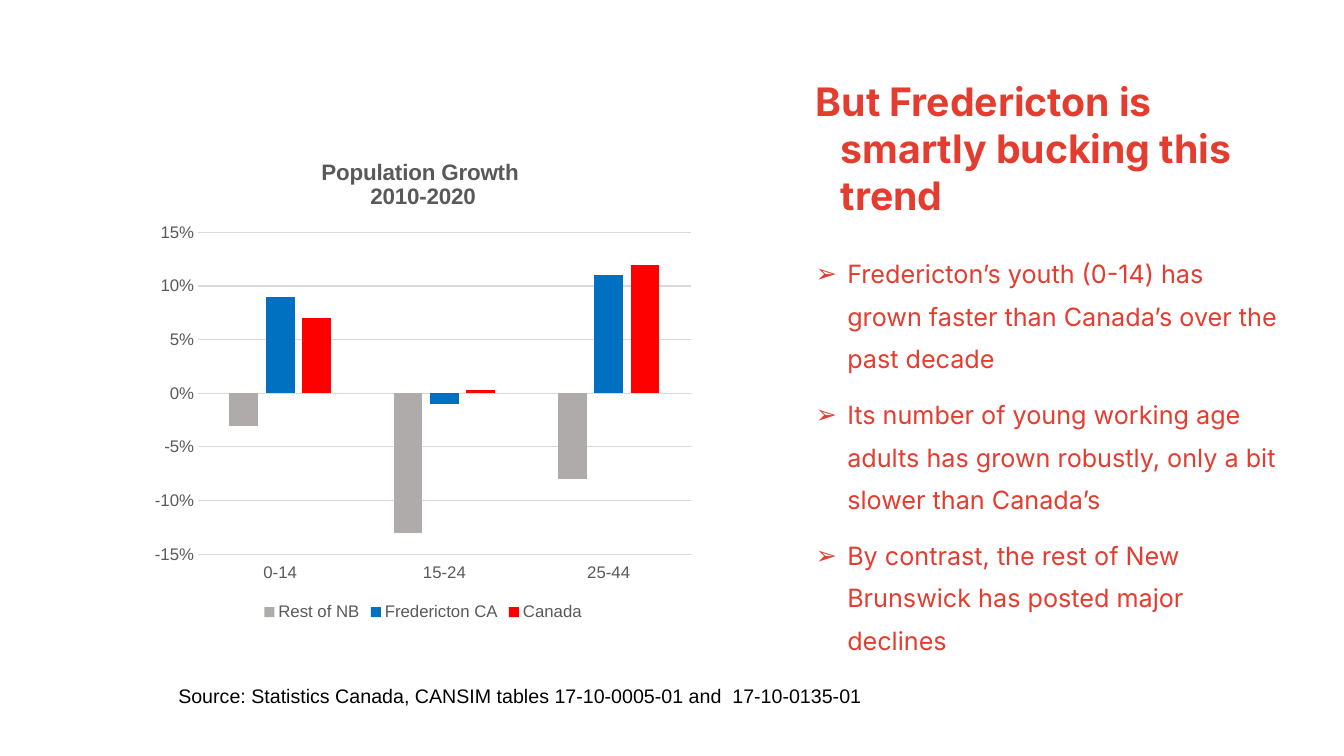
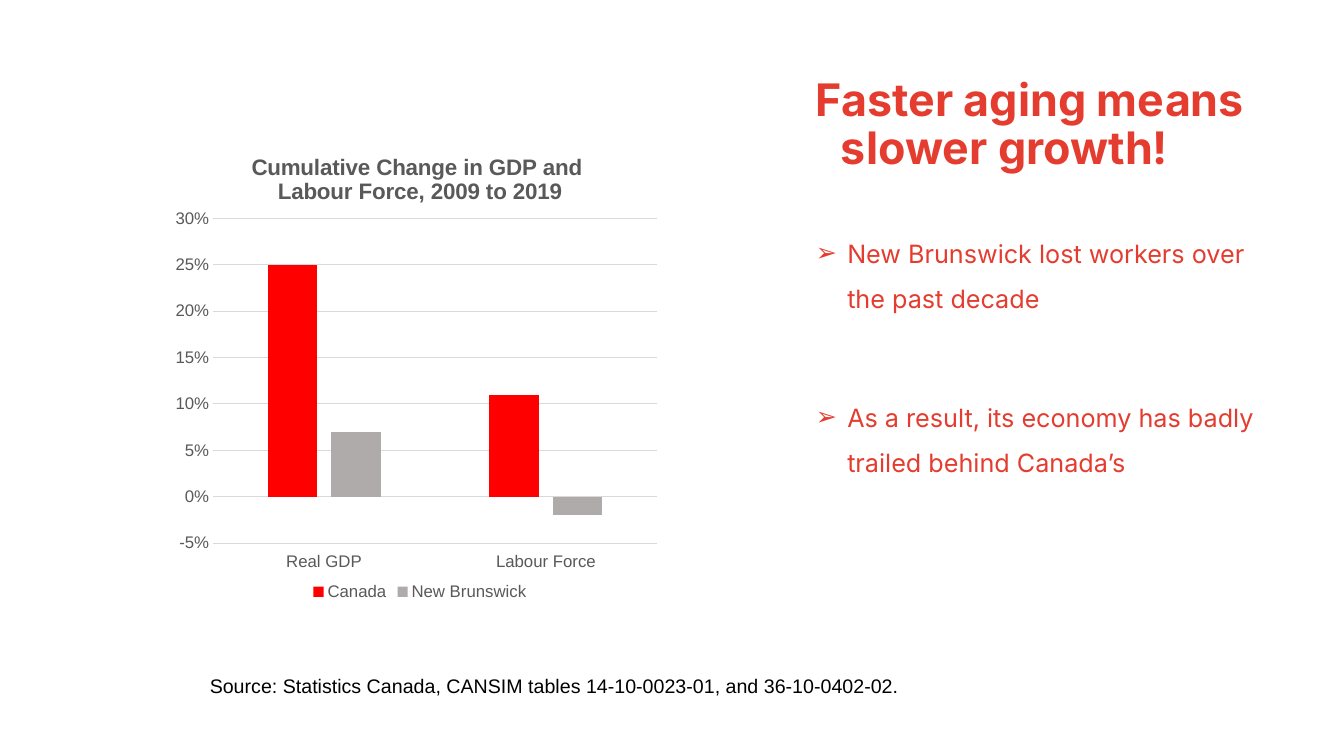
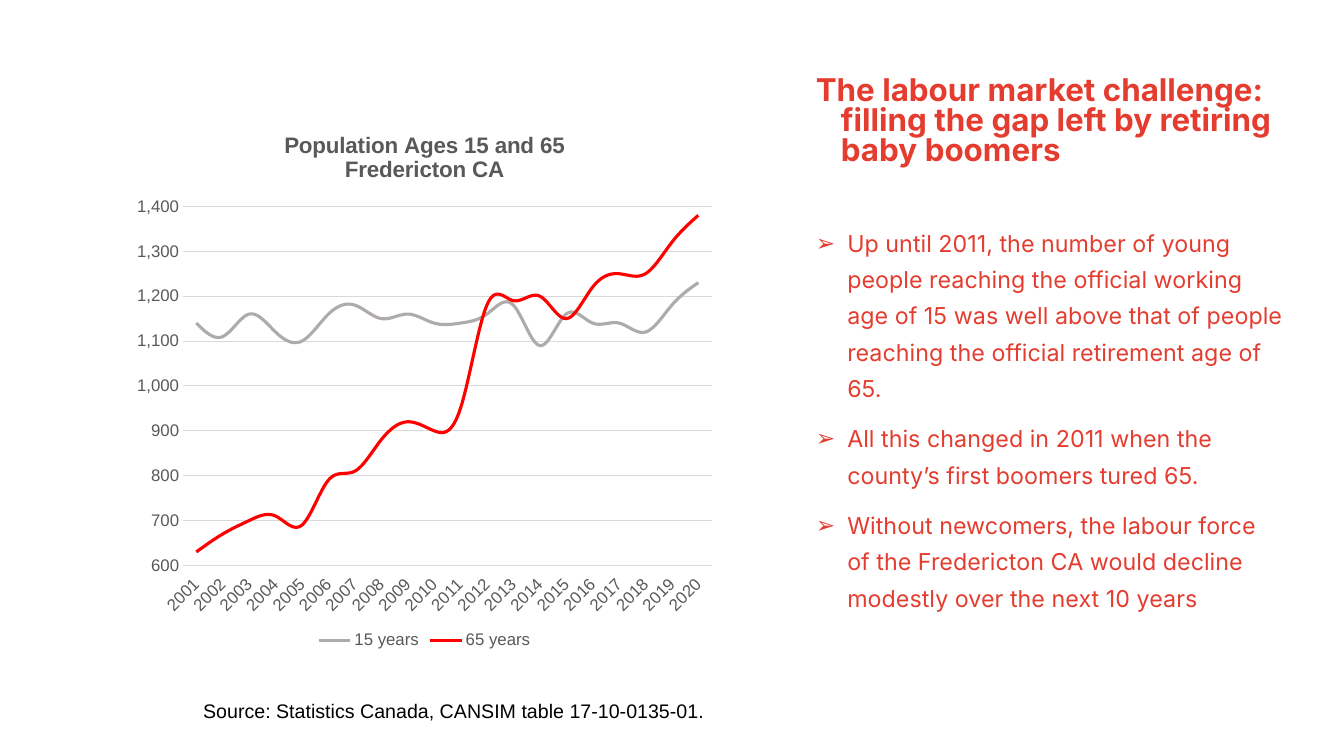
from lxml.etree import SubElement
from pptx import Presentation
from pptx.chart.data import CategoryChartData
from pptx.dml.color import RGBColor
from pptx.enum.chart import (XL_CHART_TYPE, XL_LEGEND_POSITION, XL_TICK_LABEL_POSITION,
                             XL_TICK_MARK)
from pptx.enum.text import MSO_ANCHOR, MSO_AUTO_SIZE, PP_ALIGN
from pptx.oxml import parse_xml
from pptx.oxml.ns import nsdecls, qn
from pptx.util import Pt

# Shared style
ACCENT, BLACK, LABEL, GRID = "E43D30", "000000", "595959", "D9D9D9"
GREY, BLUE, RED = "AFABAB", "0070C0", "FF0000"
TEXT_FONT, CHART_FONT = "Inter", "Arial"
COLUMN_LEFT, COLUMN_WIDTH = 557.5, 366.5
TITLE_TOP, TITLE_HEIGHT, LIST_HEIGHT = 51.75, 94, 312


def color(value):
    return RGBColor.from_string(value)


def set_font(font, size, name=CHART_FONT, hue=LABEL, bold=False):
    font.size, font.name, font.bold = Pt(size), name, bold
    font.color.rgb = color(hue)


def write_text(paragraph, text, size, name=TEXT_FONT, hue=ACCENT, bold=False,
               spacing=1.0, before=0, margin=0, indent=0, bullet=None):
    """Write one paragraph with its format."""
    paragraph.alignment = PP_ALIGN.LEFT
    paragraph.line_spacing, paragraph.space_before = spacing, Pt(before)
    properties = paragraph._p.get_or_add_pPr()
    properties.set("marL", str(Pt(margin)))
    properties.set("indent", str(Pt(indent)))
    if bullet:
        bullet_color = SubElement(properties, qn("a:buClr"))
        SubElement(bullet_color, qn("a:srgbClr"), val=hue)
        SubElement(properties, qn("a:buFont"), typeface=CHART_FONT)
        SubElement(properties, qn("a:buChar"), char=bullet)
    run = paragraph.add_run()
    run.text = text
    set_font(run.font, size, name, hue, bold)


def place(shape, box):
    shape.left, shape.top, shape.width, shape.height = (Pt(length) for length in box)
    frame = shape.text_frame
    frame.word_wrap = True
    frame.auto_size = MSO_AUTO_SIZE.NONE
    frame.vertical_anchor = MSO_ANCHOR.TOP
    return frame


def add_title(slide, box, text, size, spacing):
    frame = place(slide.shapes.title, box)
    write_text(frame.paragraphs[0], text, size, bold=True, spacing=spacing,
               margin=36, indent=-18)


def add_list(slide, box, items, size, spacing, gap):
    frame = place(slide.placeholders[1], box)
    for index, item in enumerate(items):
        paragraph = frame.add_paragraph() if index else frame.paragraphs[0]
        write_text(paragraph, item, size, spacing=spacing, before=gap if index else 0,
                   margin=40.5, indent=-22.5, bullet="➢")


def add_source(slide, box, text):
    frame = place(slide.shapes.add_textbox(0, 0, 0, 0), box)
    write_text(frame.paragraphs[0], text, 14, CHART_FONT, BLACK)


def set_plot_area(chart, box, plot):
    """Fix the inner plot area; plot is in points from the chart's corner."""
    width, height = box[2:]
    shares = zip("xywh", plot, (width, height) * 2)
    parts = "".join(f'<c:{key} val="{length / whole:.4f}"/>' for key, length, whole in shares)
    plot_area = chart.element.find(".//" + qn("c:plotArea"))
    for layout in plot_area.findall(qn("c:layout")):
        plot_area.remove(layout)
    plot_area.insert(0, parse_xml(
        f'<c:layout {nsdecls("c")}><c:manualLayout><c:layoutTarget val="inner"/>'
        f'<c:xMode val="edge"/><c:yMode val="edge"/>{parts}</c:manualLayout></c:layout>'))


def style_axes(chart, scale, number_format):
    for axis in (chart.category_axis, chart.value_axis):
        axis.major_tick_mark = axis.minor_tick_mark = XL_TICK_MARK.NONE
        set_font(axis.tick_labels.font, 12)
    category, value = chart.category_axis, chart.value_axis
    category.tick_label_position = XL_TICK_LABEL_POSITION.LOW
    value.minimum_scale, value.maximum_scale, value.major_unit = scale
    value.tick_labels.number_format = number_format
    value.tick_labels.number_format_is_linked = False
    value.format.line.fill.background()
    value.has_major_gridlines = True
    for line in (category.format.line, value.major_gridlines.format.line):
        line.color.rgb, line.width = color(GRID), Pt(0.75)


def add_chart(slide, box, kind, title, categories, series, scale, number_format, plot):
    data = CategoryChartData(number_format=number_format)
    data.categories = categories
    for name, hue, values in series:
        data.add_series(name, values)
    chart = slide.shapes.add_chart(kind, *(Pt(length) for length in box), data).chart
    set_font(chart.font, 10, hue=BLACK)

    # Title and legend
    chart.has_title = True
    frame = chart.chart_title.text_frame
    frame.text = title
    for paragraph in frame.paragraphs:
        set_font(paragraph.runs[0].font, 16, bold=True)
    chart.has_legend = True
    chart.legend.position = XL_LEGEND_POSITION.BOTTOM
    chart.legend.include_in_layout = False
    set_font(chart.legend.font, 12)

    style_axes(chart, scale, number_format)
    set_plot_area(chart, box, plot)

    # Series
    group = chart.plots[0]
    group.vary_by_categories = False
    is_line = kind == XL_CHART_TYPE.LINE
    if is_line:
        chart.element.xpath(".//c:catAx/c:txPr/a:bodyPr")[0].set("rot", "-2700000")
    else:
        group.gap_width, group.overlap = 219, -27
    for item, (name, hue, values) in zip(group.series, series):
        if is_line:
            item.smooth = True
            item.format.line.color.rgb, item.format.line.width = color(hue), Pt(2.25)
        else:
            item.invert_if_negative = False
            item.format.fill.solid()
            item.format.fill.fore_color.rgb = color(hue)


def add_chart_slide(presentation, title, bullets, source, chart):
    slide = presentation.slides.add_slide(presentation.slide_layouts[1])
    add_title(slide, (COLUMN_LEFT, TITLE_TOP, COLUMN_WIDTH, TITLE_HEIGHT), **title)
    top = bullets.pop("top")
    add_list(slide, (COLUMN_LEFT, top, COLUMN_WIDTH, LIST_HEIGHT), **bullets)
    add_source(slide, **source)
    add_chart(slide, **chart)


SLIDES = [
    dict(
        title=dict(text="But Fredericton is smartly bucking this trend", size=28, spacing=1.0),
        bullets=dict(top=172.5, size=18, spacing=1.4, gap=10, items=[
            "Fredericton’s youth (0-14) has grown faster than Canada’s over the past decade",
            "Its number of young working age adults has grown robustly, only a bit slower "
            "than Canada’s",
            "By contrast, the rest of New Brunswick has posted major declines"]),
        source=dict(box=(120.25, 485, 588, 24.5), text="Source: Statistics Canada, CANSIM "
                    "tables 17-10-0005-01 and  17-10-0135-01"),
        chart=dict(
            box=(103, 100, 398.5, 346.5), plot=(38.5, 66, 352, 230),
            kind=XL_CHART_TYPE.COLUMN_CLUSTERED, title="Population Growth \n2010-2020",
            categories=["0-14", "15-24", "25-44"], scale=(-0.15, 0.15, 0.05),
            number_format="0%",
            series=[("Rest of NB", GREY, (-0.03, -0.13, -0.08)),
                    ("Fredericton CA", BLUE, (0.09, -0.01, 0.11)),
                    ("Canada", RED, (0.07, 0.003, 0.12))])),
    dict(
        title=dict(text="Faster aging means slower growth!", size=32, spacing=0.9),
        bullets=dict(top=155.5, size=18, spacing=1.5, gap=52.5, items=[
            "New Brunswick lost workers over the past decade",
            "As a result, its economy has badly trailed behind Canada’s"]),
        source=dict(box=(142.75, 478, 674, 24.5), text="Source: Statistics Canada, CANSIM "
                    "tables 14-10-0023-01, and 36-10-0402-02."),
        chart=dict(
            box=(120, 97, 360, 335), plot=(32.25, 59, 317, 232),
            kind=XL_CHART_TYPE.COLUMN_CLUSTERED,
            title="Cumulative Change in GDP and \nLabour Force, 2009 to 2019",
            categories=["Real GDP", "Labour Force"], scale=(-0.05, 0.3, 0.05),
            number_format="0%",
            series=[("Canada", RED, (0.25, 0.11)),
                    ("New Brunswick", GREY, (0.07, -0.02))])),
    dict(
        title=dict(text="The labour market challenge: filling the gap left by retiring "
                   "baby boomers", size=22.4, spacing=0.8),
        bullets=dict(top=154, size=16.65, spacing=1.3, gap=10, items=[
            "Up until 2011, the number of young people reaching the official working age "
            "of 15 was well above that of people reaching the official retirement age of 65.",
            "All this changed in 2011 when the county’s first boomers tured 65.",
            "Without newcomers, the labour force of the Fredericton CA would decline "
            "modestly over the next 10 years"]),
        source=dict(box=(138, 495.5, 674, 24.5), text="Source: Statistics Canada, CANSIM "
                    "table 17-10-0135-01."),
        chart=dict(
            box=(89.25, 80, 428, 386.5), plot=(41.5, 67.5, 377.5, 256.5),
            kind=XL_CHART_TYPE.LINE, title="Population Ages 15 and 65\nFredericton CA",
            categories=[str(year) for year in range(2001, 2021)],
            scale=(600, 1400, 100), number_format="#,##0",
            series=[("15 years", GREY, (1140, 1110, 1160, 1120, 1100, 1160, 1180, 1150, 1160,
                                        1140, 1140, 1160, 1180, 1090, 1160, 1140, 1140, 1120,
                                        1180, 1230)),
                    ("65 years", RED, (630, 670, 700, 710, 690, 790, 810, 880, 920, 900,
                                       950, 1180, 1190, 1200, 1150, 1220, 1250, 1250,
                                       1320, 1380))])),
]


def main():
    presentation = Presentation()
    presentation.slide_width, presentation.slide_height = Pt(960), Pt(540)
    for content in SLIDES:
        add_chart_slide(presentation, **content)
    presentation.save("out.pptx")


if __name__ == "__main__":
    main()
